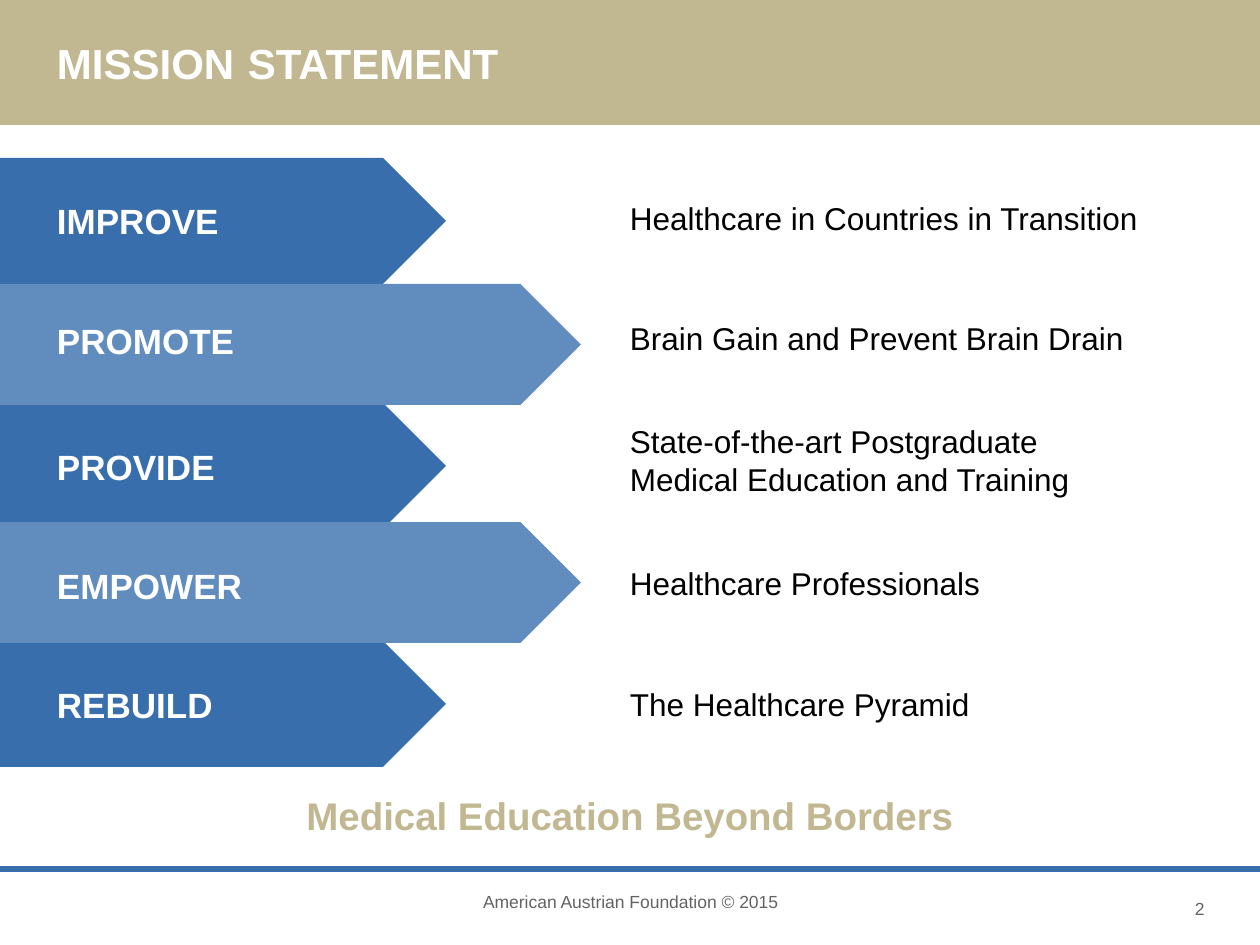
from pptx import Presentation
from pptx.dml.color import RGBColor
from pptx.enum.shapes import MSO_CONNECTOR, MSO_SHAPE
from pptx.enum.text import MSO_ANCHOR, MSO_AUTO_SIZE, PP_ALIGN
from pptx.oxml.ns import qn
from pptx.util import Pt
from lxml import etree

RECT, ARROW = MSO_SHAPE.RECTANGLE, MSO_SHAPE.PENTAGON
LINE = MSO_CONNECTOR.STRAIGHT
LEFT, MID, RIGHT = PP_ALIGN.LEFT, PP_ALIGN.CENTER, PP_ALIGN.RIGHT
TOP, HALF = MSO_ANCHOR.TOP, MSO_ANCHOR.MIDDLE
GROW = MSO_AUTO_SIZE.SHAPE_TO_FIT_TEXT

SAND, BLUE, SKY = "C1B892", "396EAC", "618CBE"
WHITE, BLACK, GREY = "FFFFFF", "000000", "626464"
WIDE, HIGH = 1260, 945


def px(n):
    return round(n * 914400 / 126)


def tint(code):
    return RGBColor.from_string(code)


class Deck:
    font = "Arial"

    def __init__(self):
        self.file = Presentation()
        self.file.slide_width, self.file.slide_height = px(WIDE), px(HIGH)
        self.slide = self.file.slides.add_slide(self.file.slide_layouts[6])

    def shape(self, kind, x, y, w, h, fill):
        item = self.slide.shapes.add_shape(kind, px(x), px(y), px(w), px(h))
        item.shadow.inherit = False
        item.fill.solid()
        item.fill.fore_color.rgb = tint(fill)
        item.line.fill.background()

    def rule(self, x1, y1, x2, y2, color, width):
        item = self.slide.shapes.add_connector(LINE, px(x1), px(y1), px(x2), px(y2))
        item.line.color.rgb = tint(color)
        item.line.width = Pt(width)
        etree.SubElement(item._element.spPr, qn("a:effectLst"))

    def text(self, x, y, w, h, lines, size, color, bold=False,
             align=LEFT, anchor=TOP, flush=False, grow=True):
        box = self.slide.shapes.add_textbox(px(x), px(y), px(w), px(h))
        frame = box.text_frame
        frame.word_wrap = True
        frame.vertical_anchor = anchor
        if grow:
            frame.auto_size = GROW
        if flush:
            frame.margin_left = frame.margin_top = frame.margin_bottom = 0
        for i, line in enumerate(lines):
            para = frame.paragraphs[0] if i == 0 else frame.add_paragraph()
            para.add_run().text = line
            para.alignment = align
            para.font.name = self.font
            para.font.size = Pt(size)
            para.font.bold = bold
            para.font.color.rgb = tint(color)
        return frame


deck = Deck()

# Header band and footer rule
deck.shape(RECT, 0, -4, WIDE, 129, SAND)
deck.rule(0, 869, WIDE, 869, BLUE, 3.25)

# Goals: arrow top, label top, label, text top, text lines
goals = [
    (158, 199, "IMPROVE", 199, ["Healthcare in Countries in Transition"]),
    (284, 319, "PROMOTE", 319, ["Brain Gain and Prevent Brain Drain"]),
    (403, 445, "PROVIDE", 422, ["State-of-the-art Postgraduate",
                                "Medical Education and Training"]),
    (522, 564, "EMPOWER", 564, ["Healthcare Professionals"]),
    (641, 683, "REBUILD", 685, ["The Healthcare Pyramid"]),
]

# Short dark arrows lie behind the long light ones
for start, w, h, fill in [(0, 446, 126, BLUE), (1, 581, 121, SKY)]:
    for goal in goals[start::2]:
        deck.shape(ARROW, 0, goal[0], w, h, fill)

for _, y, label, top, lines in goals:
    deck.text(57, y, 338, 43, [label], 20, WHITE, bold=True, flush=True)
    deck.text(630, top, 605, 38 * len(lines), lines, 18, BLACK, flush=True)

# Title, with a wider space between its words
title = deck.text(57, 39, 1206, 52, ["MISSION"], 24, WHITE, bold=True,
                  anchor=HALF, flush=True).paragraphs[0]
title.line_spacing = 0.85
gap = title.add_run()
gap.text = " "
gap.font.size = Pt(28)
title.add_run().text = "STATEMENT"

# Motto and footer
deck.text(0, 786, WIDE, 59, ["Medical Education Beyond Borders"], 22, SAND,
          bold=True, align=MID)
deck.text(431, 885, 399, 63, ["American Austrian Foundation © 2015"], 10, GREY,
          align=MID, grow=False)
deck.text(955, 892, 262, 63, ["2"], 10, GREY, align=RIGHT, grow=False)

deck.file.save("out.pptx")
